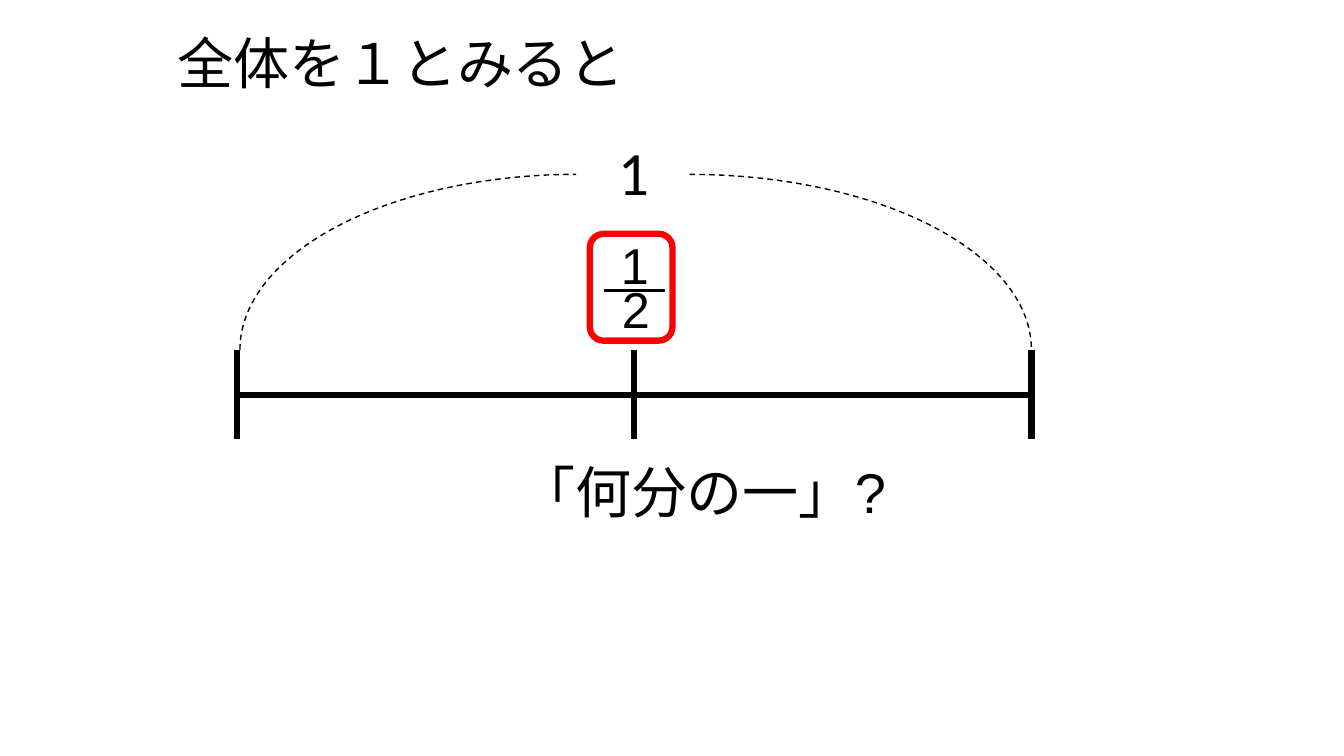
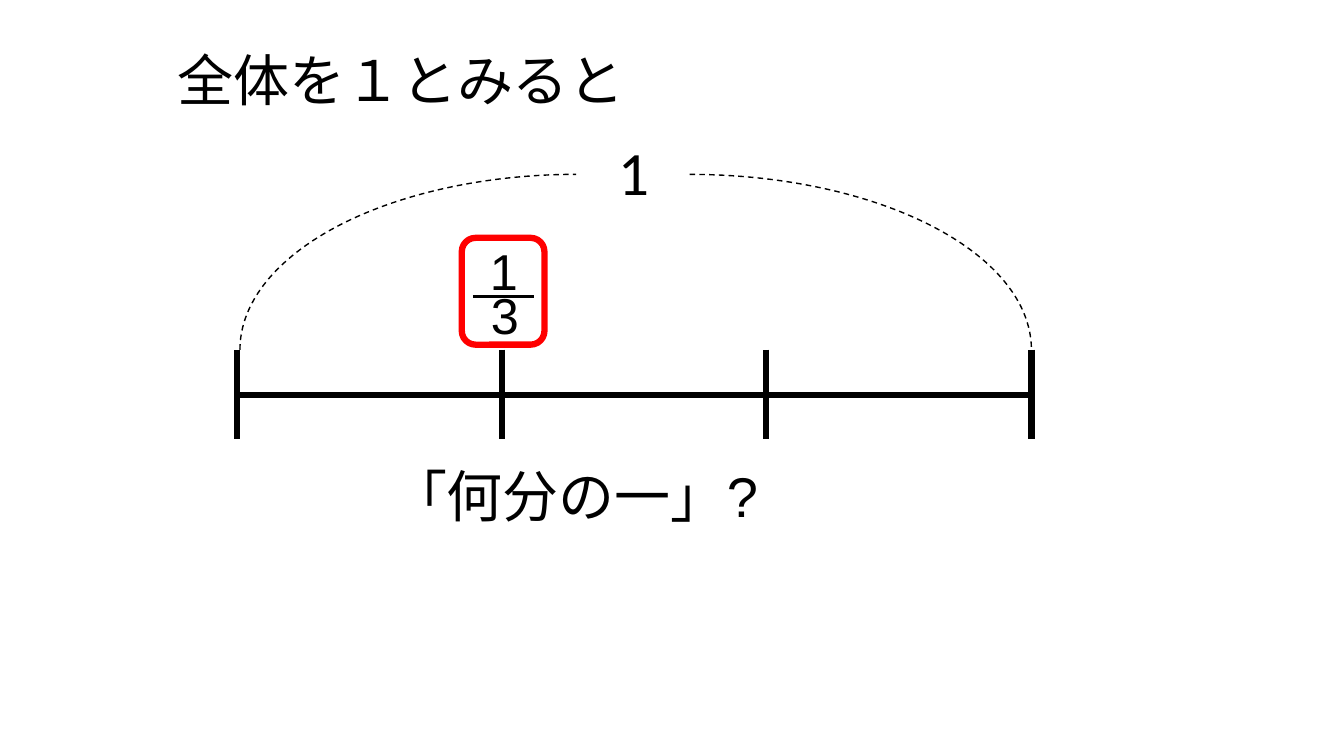
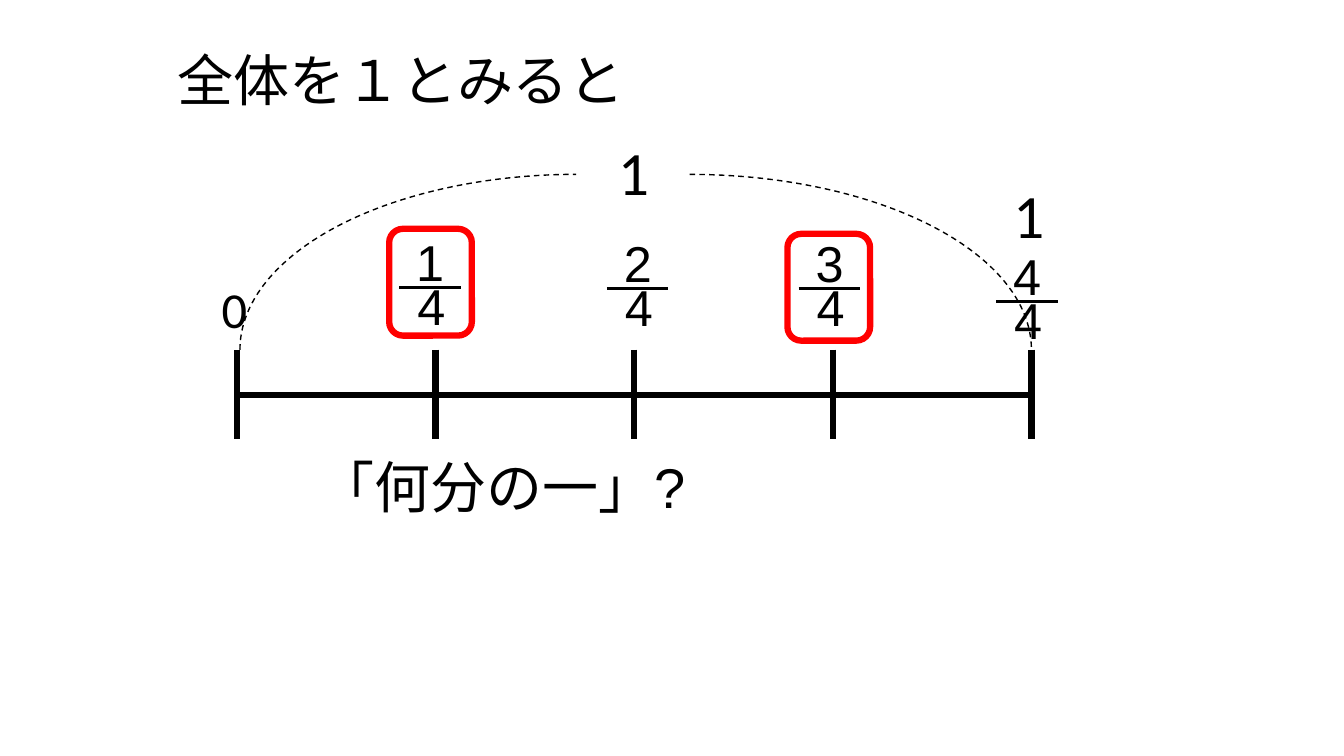
from dataclasses import dataclass

from pptx import Presentation
from pptx.dml.color import RGBColor
from pptx.enum.dml import MSO_LINE
from pptx.enum.shapes import MSO_CONNECTOR, MSO_SHAPE
from pptx.enum.text import MSO_AUTO_SIZE
from pptx.oxml.ns import qn
from pptx.util import Pt

STRAIGHT = MSO_CONNECTOR.STRAIGHT
ARC, ROUND = MSO_SHAPE.ARC, MSO_SHAPE.ROUNDED_RECTANGLE
DASH = MSO_LINE.DASH
GROW = MSO_AUTO_SIZE.SHAPE_TO_FIT_TEXT
PX = 9144  # EMU: 100 px to the inch


@dataclass(frozen=True)
class Theme:
    ink = RGBColor(0, 0, 0)
    red = RGBColor(255, 0, 0)
    sans = "Arial"
    body = "Calibri"
    head = 40
    whole = 44
    digit = 36
    bold = 4.5
    bar = 2.25
    thin = 1


T = Theme()
LEFT, RIGHT = 235, 1023
TOP, MID, LOW = 347, 392, 436


def emu(*sizes):
    return [size * PX for size in sizes]


def style(run, font, size):
    run.font.name = font
    run.font.size = Pt(size)
    run.font.color.rgb = T.ink


def line(shapes, x1, y1, x2, y2, width):
    link = shapes.add_connector(STRAIGHT, *emu(x1, y1, x2, y2))
    link.line.color.rgb = T.ink
    link.line.width = Pt(width)
    props = link._element.spPr
    props.append(props.makeelement(qn("a:effectLst"), {}))


def outline(shapes, kind, box, color, width):
    """Add an unfilled shape."""
    shape = shapes.add_shape(kind, *emu(*box))
    shape.shadow.inherit = False
    shape.fill.background()
    shape.line.color.rgb = color
    shape.line.width = Pt(width)
    return shape


def label(shapes, text, box, font, size):
    """Add a short text whose box fits it."""
    frame = shapes.add_textbox(*emu(*box)).text_frame
    frame.word_wrap = False
    frame.auto_size = GROW
    frame.text = text
    style(frame.paragraphs[0].runs[0], font, size)


def phrase(shapes, box, parts):
    """Add a wrapped line of (text, font) parts."""
    frame = shapes.add_textbox(*emu(*box)).text_frame
    frame.word_wrap = True
    para = frame.paragraphs[0]
    para.line_spacing = 0.9
    for text, font in parts:
        run = para.add_run()
        run.text = text
        style(run, font, T.head)


def whole(shapes, x, y):
    label(shapes, "1", (x, y, 51, 84), T.body, T.whole)


def scale(shapes, count):
    """Draw the number line cut into equal parts."""
    line(shapes, LEFT, MID, RIGHT, MID, T.bold)
    for i in range(count + 1):
        x = LEFT + round((RIGHT - LEFT) * i / count)
        line(shapes, x, TOP, x, LOW, T.bold)


def span(shapes):
    """Draw the two dashed arcs and the 1 between them."""
    group = shapes.add_group_shape().shapes
    left = outline(group, ARC, (238, 173, 667, 348), T.ink, T.thin)
    left.adjustments[0], left.adjustments[1] = 108, 162
    right = outline(group, ARC, (345, 173, 678, 348), T.ink, T.thin)
    for arc in (left, right):
        arc.line.dash_style = DASH
    whole(shapes, 603, 128)


def ratio(shapes, top, base, x, y):
    """Draw a fraction whose bar starts at x, y."""
    group = shapes.add_group_shape().shapes
    label(group, base, (x + 8, y - 17, 45, 71), T.sans, T.digit)
    label(group, top, (x + 7, y - 61, 45, 71), T.sans, T.digit)
    line(group, x, y, x + 61, y, T.bar)


def mark(shapes, x, y):
    outline(shapes, ROUND, (x, y, 82, 106), T.red, T.bold)


def lesson(deck, count, head, spot, pin):
    """Build one slide: its parts, title height, 1/n place and mark place."""
    shapes = deck.slides.add_slide(deck.slide_layouts[6]).shapes
    scale(shapes, count)
    phrase(shapes, (166, head, 667, 82), [("全体を１とみると", T.sans)])
    span(shapes)
    ratio(shapes, "1", str(count), *spot)
    mark(shapes, *pin)
    x, y = pin
    phrase(shapes, (x - 80, y + 225, 402, 86),
           [("「何分の一」", T.body), ("?", T.sans)])
    return shapes


def main():
    deck = Presentation()
    deck.slide_width, deck.slide_height = emu(1333, 750)
    lesson(deck, 2, 31, (599, 288), (585, 232))
    lesson(deck, 3, 48, (469, 294), (458, 236))
    shapes = lesson(deck, 4, 48, (396, 285), (386, 227))
    mark(shapes, 781, 232)
    for top, x, y in (("2", 602, 286), ("3", 792, 286), ("4", 988, 299)):
        ratio(shapes, top, "4", x, y)
    whole(shapes, 995, 171)
    label(shapes, "0", (210, 271, 46, 71), T.body, T.digit)
    deck.save("out.pptx")


if __name__ == "__main__":
    main()
